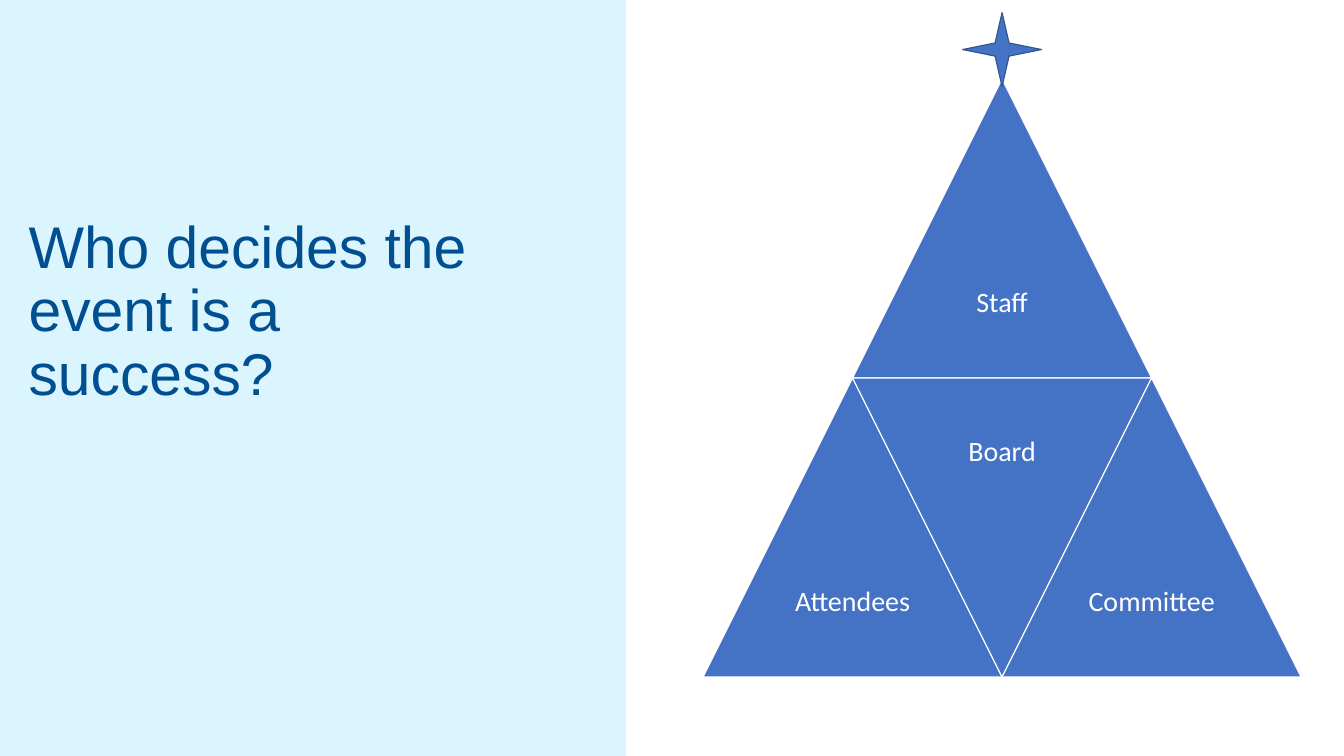
from dataclasses import dataclass

from pptx import Presentation
from pptx.dml.color import RGBColor
from pptx.enum import shapes, text
from pptx.util import Inches, Pt

# Content: label, column in half-triangle steps, row, rotation
TITLE = "Who decides the event is a success?"
GROUPS = [
    ("Staff", 1, 0, 0),
    ("Attendees", 0, 1, 0),
    ("Board", 1, 1, 180),
    ("Committee", 2, 1, 0),
]


@dataclass(frozen=True)
class Theme:
    panel: RGBColor = RGBColor.from_string("DBF5FF")
    title: RGBColor = RGBColor.from_string("004F91")
    blue: RGBColor = RGBColor.from_string("4472C4")
    star_line: RGBColor = RGBColor.from_string("325491")
    white: RGBColor = RGBColor.from_string("FFFFFF")
    title_font: str = "Arial"
    label_font: str = "Calibri"
    title_size: float = 50.4
    label_size: float = 24


THEME = Theme()
PYRAMID_LEFT, PYRAMID_TOP, SIDE = 8.37, 0.94, 3.56


def add_shape(slide, kind, box, fill, line=None):
    shape = slide.shapes.add_shape(kind, *map(Inches, box))
    shape.shadow.inherit = False
    shape.fill.solid()
    shape.fill.fore_color.rgb = fill
    if line is None:
        shape.line.fill.background()
    else:
        shape.line.color.rgb = line
        shape.line.width = Pt(1)
    return shape


def format_paragraph(paragraph, font, size, color):
    paragraph.line_spacing = 0.9
    paragraph.font.name = font
    paragraph.font.size = Pt(size)
    paragraph.font.color.rgb = color


def add_title(slide):
    title = slide.shapes.title
    title.left, title.top, title.width, title.height = map(
        Inches, (0.24, 2.92, 5.64, 1.99))
    frame = title.text_frame
    frame.text = TITLE
    frame.word_wrap = True
    frame.auto_size = text.MSO_AUTO_SIZE.NONE
    frame.vertical_anchor = text.MSO_ANCHOR.BOTTOM
    paragraph = frame.paragraphs[0]
    paragraph.alignment = text.PP_ALIGN.LEFT
    format_paragraph(paragraph, THEME.title_font, THEME.title_size, THEME.title)
    return title


def add_group(slide, label, column, row, rotation):
    left = PYRAMID_LEFT + column * SIDE / 2
    top = PYRAMID_TOP + row * SIDE
    triangle = add_shape(slide, shapes.MSO_SHAPE.ISOSCELES_TRIANGLE,
                         (left, top, SIDE, SIDE), THEME.blue, THEME.white)
    triangle.rotation = rotation

    # The label sits in the wide half of its triangle
    label_top = top if rotation else top + SIDE / 2
    box = slide.shapes.add_textbox(
        *map(Inches, (left + SIDE / 4, label_top, SIDE / 2, SIDE / 2)))
    frame = box.text_frame
    frame.text = label
    frame.word_wrap = True
    frame.vertical_anchor = text.MSO_ANCHOR.MIDDLE
    frame.margin_left = frame.margin_right = Inches(0.1)
    frame.margin_top = frame.margin_bottom = Inches(0.1)
    paragraph = frame.paragraphs[0]
    paragraph.alignment = text.PP_ALIGN.CENTER
    format_paragraph(paragraph, THEME.label_font, THEME.label_size, THEME.white)


def main():
    presentation = Presentation()
    presentation.slide_width = Inches(16)
    presentation.slide_height = Inches(9)
    slide = presentation.slides.add_slide(presentation.slide_layouts[5])

    # Left panel behind the title
    title = add_title(slide)
    panel = add_shape(slide, shapes.MSO_SHAPE.RECTANGLE,
                      (0, 0, 7.45, 9), THEME.panel)
    title.element.addprevious(panel.element)

    # Pyramid of groups with a star on top
    for group in GROUPS:
        add_group(slide, *group)
    add_shape(slide, shapes.MSO_SHAPE.STAR_4_POINT,
              (11.46, 0.15, 0.94, 0.88), THEME.blue, THEME.star_line)

    presentation.save("out.pptx")


if __name__ == "__main__":
    main()
